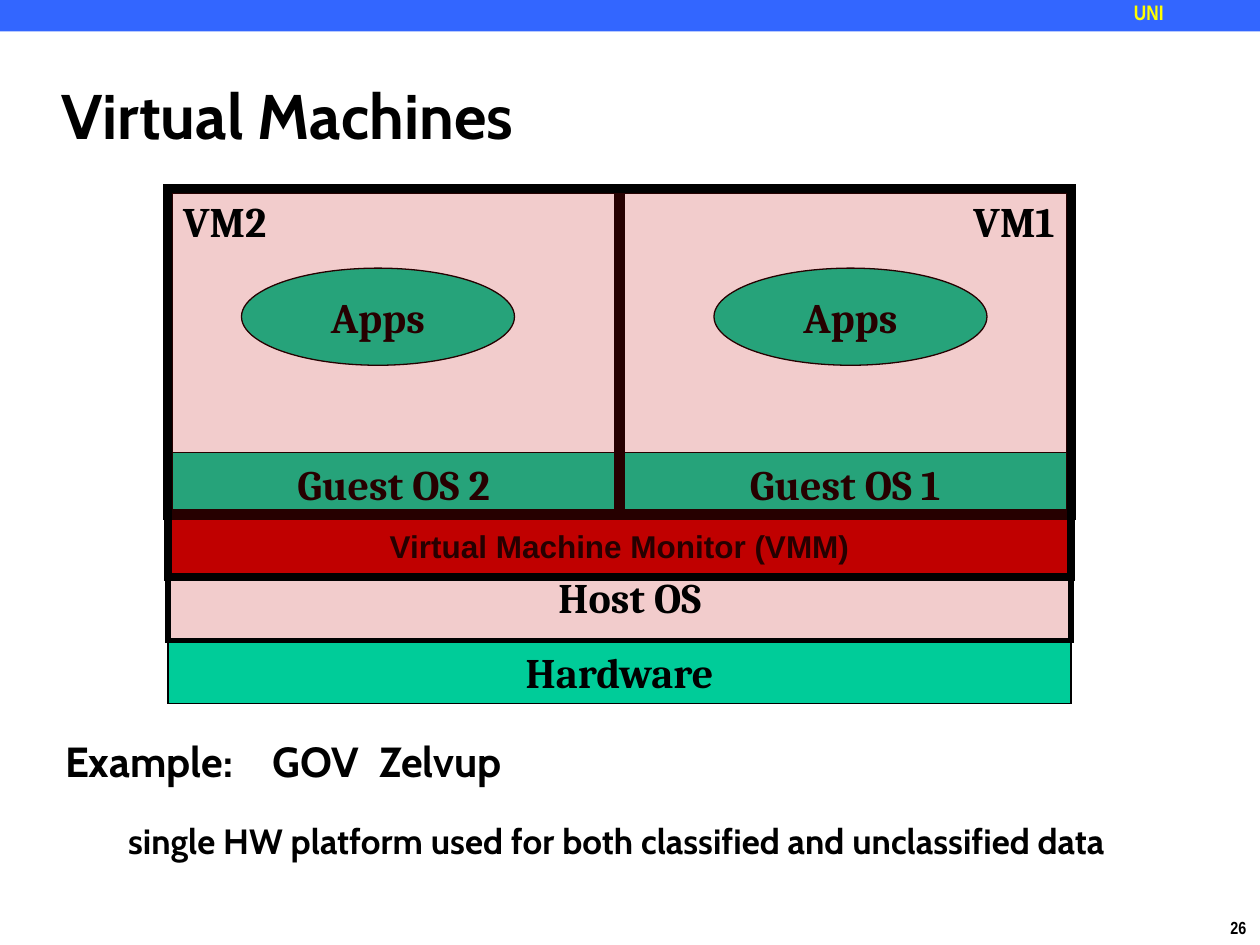
"""Build the slide on virtual machines: two guests above a monitor, a host OS and hardware."""
from dataclasses import dataclass
from typing import Optional

from lxml import etree
from pptx import Presentation
from pptx import util as u
from pptx.dml import color
from pptx.enum import shapes, text
from pptx.oxml import ns

COLORS = {"black": "000000", "green": "00CC99", "red": "C00000",
          "blue": "3366FF", "yellow": "FFFF00"}
LEFT, TOP, WIDTH, ROW = 96, 108, 516, 36
HALF = WIDTH / 2
GUEST_Y, MONITOR_Y, HOST_Y, HARDWARE_Y = (258 + ROW * row for row in range(4))
CENTER, START = text.PP_ALIGN.CENTER, text.PP_ALIGN.LEFT


@dataclass(frozen=True)
class Block:
    left: float
    top: float
    width: float
    height: float
    fill: Optional[str] = None
    label: str = ""
    font: str = "Cambria"
    size: float = 24
    line: float = 0.75
    opacity: int = 100
    kind: shapes.MSO_SHAPE = shapes.MSO_SHAPE.RECTANGLE


@dataclass(frozen=True)
class Caption:
    left: float
    top: float
    width: float
    height: float
    words: str
    font: str = "Cambria"
    size: float = 24
    ink: str = "black"
    align: text.PP_ALIGN = START
    inset: Optional[float] = None


def rgb(name: str) -> color.RGBColor:
    """Return the named palette colour."""
    return color.RGBColor.from_string(COLORS[name])


def apply(target, values: dict) -> None:
    """Set each format value on the target."""
    for key, value in values.items():
        setattr(target, key, value)


def place(part, left: float, top: float, width: float, height: float) -> None:
    """Move a placeholder to a position given in points."""
    apply(part, {"left": u.Pt(left), "top": u.Pt(top),
                 "width": u.Pt(width), "height": u.Pt(height)})


def write(paragraph, words: str, font: str, size: float, ink: str = "black",
          align: text.PP_ALIGN = START, tracking: float = 0) -> None:
    """Add one bold run to a paragraph, with letter tracking in points."""
    paragraph.alignment = align
    run = paragraph.add_run()
    run.text = words
    apply(run.font, {"name": font, "size": u.Pt(size), "bold": True})
    run.font.color.rgb = rgb(ink)
    if tracking:
        run._r.get_or_add_rPr().set("spc", str(round(tracking * 100)))


def draw_block(slide, block: Block) -> None:
    """Draw one filled or framed block with its label."""
    box = slide.shapes.add_shape(block.kind, u.Pt(block.left), u.Pt(block.top),
                                 u.Pt(block.width), u.Pt(block.height))
    box.shadow.inherit = False
    if block.fill:
        box.fill.solid()
        box.fill.fore_color.rgb = rgb(block.fill)
    else:
        box.fill.background()
    if block.opacity < 100:
        tint = box._element.spPr.find(ns.qn("a:solidFill"))[0]
        etree.SubElement(tint, ns.qn("a:alpha"), val=str(block.opacity * 1000))
    if block.line:
        box.line.width = u.Pt(block.line)
        box.line.color.rgb = rgb("black")
        outline = box._element.spPr.find(ns.qn("a:ln"))
        etree.SubElement(outline, ns.qn("a:miter"), lim="800000")
    else:
        box.line.fill.background()
    if block.label:
        apply(box.text_frame, {"word_wrap": False,
                               "vertical_anchor": text.MSO_ANCHOR.MIDDLE})
        write(box.text_frame.paragraphs[0], block.label, block.font, block.size,
              align=CENTER)


def draw_caption(slide, caption: Caption) -> None:
    """Draw one free-standing line of text."""
    frame = slide.shapes.add_textbox(u.Pt(caption.left), u.Pt(caption.top),
                                     u.Pt(caption.width), u.Pt(caption.height)).text_frame
    frame.word_wrap = False
    if caption.inset is not None:
        apply(frame, {f"margin_{side}": u.Pt(caption.inset)
                      for side in ("left", "top", "right", "bottom")})
    write(frame.paragraphs[0], caption.words, caption.font, caption.size,
          caption.ink, caption.align)


def draw_guest(slide, number: int, left: float, apps_left: float) -> None:
    """Draw one virtual machine: guest OS, frame and applications."""
    draw_block(slide, Block(left, GUEST_Y + 0.5, HALF, ROW - 0.5, "green",
                            f"Guest OS {number}"))
    draw_block(slide, Block(left, TOP, HALF, MONITOR_Y - TOP, line=6))
    draw_block(slide, Block(apps_left, 153.25, 156, 55.5, "green", "Apps",
                            kind=shapes.MSO_SHAPE.OVAL))


def fill_title(title) -> None:
    """Place and write the slide title."""
    place(title, 28, 35.25, 598, 60)
    apply(title.text_frame, {"vertical_anchor": text.MSO_ANCHOR.MIDDLE,
                             "auto_size": text.MSO_AUTO_SIZE.NONE})
    write(title.text_frame.paragraphs[0], "Virtual Machines", "Cabin", 36)


def fill_example(body) -> None:
    """Place and write the example below the diagram."""
    place(body, 30, 414, 666, 123)
    frame = body.text_frame
    frame.auto_size = text.MSO_AUTO_SIZE.NONE
    example = (("Example:", 0), (" ", 17), ("GOV", 0), (" ", 6), ("Zelvup", 0))
    detail = (("single HW platform used for both classified and unclassified data", 0),)
    lines = ((example, 24, 1.1, 0), (detail, 20, 1.8, 36))
    for level, (pieces, size, spacing, indent) in enumerate(lines):
        paragraph = frame.add_paragraph() if level else frame.paragraphs[0]
        apply(paragraph, {"level": level, "line_spacing": spacing,
                          "space_before": u.Pt(0)})
        for words, tracking in pieces:
            write(paragraph, words, "Cabin", size, tracking=tracking)
        properties = paragraph._p.get_or_add_pPr()
        properties.set("marL", str(u.Pt(indent)))
        properties.set("indent", "0")
        etree.SubElement(properties, ns.qn("a:buNone"))


def main() -> None:
    """Assemble and save the slide."""
    deck = Presentation()
    apply(deck, {"slide_width": u.Pt(720), "slide_height": u.Pt(540)})
    slide = deck.slides.add_slide(deck.slide_layouts[1])
    title, example = slide.placeholders
    fill_title(title)
    fill_example(example)

    draw_caption(slide, Caption(696, 520.5, 24.5, 19.5, "26", "Arial Narrow", 10))
    draw_block(slide, Block(0, 0, 720, 18, "blue", line=0))
    draw_caption(slide, Caption(648, 0, 72, 16, "UNI", "Arial Narrow", 12,
                                "yellow", inset=0))

    draw_block(slide, Block(LEFT, MONITOR_Y, WIDTH, ROW, "red",
                            "Virtual Machine Monitor (VMM)", "Arial", 18))
    draw_guest(slide, 2, LEFT, 138)
    draw_guest(slide, 1, LEFT + HALF, 408)
    draw_block(slide, Block(LEFT, HARDWARE_Y, WIDTH, ROW, "green", "Hardware"))
    draw_block(slide, Block(LEFT, TOP, WIDTH, HARDWARE_Y - TOP, "red", line=3, opacity=20))
    draw_caption(slide, Caption(312, 323, 101.5, ROW, "Host OS"))
    draw_block(slide, Block(LEFT, TOP, WIDTH, HOST_Y - TOP, line=4.5))
    for name, left in (("VM2", 95), ("VM1", 546)):
        draw_caption(slide, Caption(left, TOP, 67, ROW, name, align=CENTER))
    deck.save("out.pptx")


if __name__ == "__main__":
    main()
